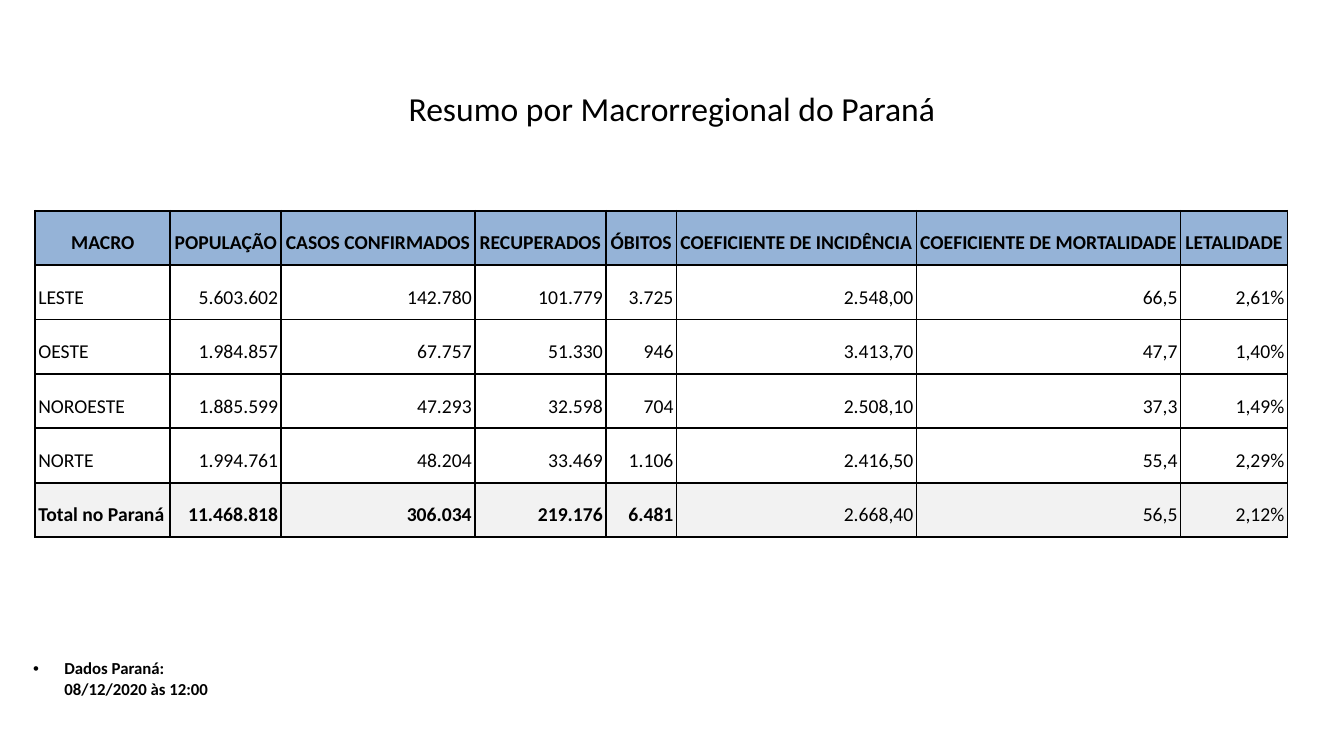
"""Build the slide that sums up cases by macro-region of Paraná."""
import pptx
import pptx.util
import pptx.dml.color
import pptx.enum.text
import pptx.oxml.ns
import lxml.etree

TITLE = "Resumo por Macrorregional do Paraná"
NOTE = "Dados Paraná: 08/12/2020 às 12:00"
HEAD = ["MACRO", "POPULAÇÃO", "CASOS CONFIRMADOS", "RECUPERADOS", "ÓBITOS",
        "COEFICIENTE DE INCIDÊNCIA", "COEFICIENTE DE MORTALIDADE", "LETALIDADE"]
BODY = [
    ["LESTE", "5.603.602", "142.780", "101.779", "3.725", "2.548,00", "66,5", "2,61%"],
    ["OESTE", "1.984.857", "67.757", "51.330", "946", "3.413,70", "47,7", "1,40%"],
    ["NOROESTE", "1.885.599", "47.293", "32.598", "704", "2.508,10", "37,3", "1,49%"],
    ["NORTE", "1.994.761", "48.204", "33.469", "1.106", "2.416,50", "55,4", "2,29%"],
]
TOTAL = ["Total no Paraná", "11.468.818", "306.034", "219.176", "6.481",
         "2.668,40", "56,5", "2,12%"]
COLS = [1.34, 1.1, 1.92, 1.3, 0.7, 2.38, 2.62, 1.06]
ROW = 0.54
BOLD = 5
SIZE = (13.33, 7.5)
INK = {"text": "000000", "head": "95B3D7", "total": "F2F2F2"}

Inch = pptx.util.Inches
Pt = pptx.util.Pt
Align = pptx.enum.text.PP_ALIGN
Anchor = pptx.enum.text.MSO_ANCHOR
qn = pptx.oxml.ns.qn


def rgb(name):
    return pptx.dml.color.RGBColor.from_string(INK[name])


def apply(item, form):
    for key, val in form.items():
        setattr(item, key, val)


def write(para, text, size, bold=False, **form):
    para.text = text
    apply(para, form)
    font = para.runs[0].font
    apply(font, {"name": "Calibri", "size": Pt(size), "bold": bold})
    font.color.rgb = rgb("text")


def add_text(slide, left, top, width, height):
    box = slide.shapes.add_textbox(*map(Inch, (left, top, width, height)))
    box.text_frame.word_wrap = True
    return box.text_frame.paragraphs[0]


def add_dot(para):
    props = para._p.get_or_add_pPr()
    apply_to = {"marL": Inch(0.31), "indent": -Inch(0.31)}
    for key, val in apply_to.items():
        props.set(key, str(int(val)))
    font = lxml.etree.SubElement(props, qn("a:buFont"))
    font.set("typeface", "Arial")
    lxml.etree.SubElement(props, qn("a:buChar")).set("char", "•")


def add_edges(cell):
    props = cell._tc.get_or_add_tcPr()
    for spot, side in enumerate("LRTB"):
        line = lxml.etree.Element(qn("a:ln" + side), w=str(int(Pt(1.5))))
        fill = lxml.etree.SubElement(line, qn("a:solidFill"))
        lxml.etree.SubElement(fill, qn("a:srgbClr")).set("val", INK["text"])
        props.insert(spot, line)


def fill_cell(cell, text, row, col, last):
    apply(cell, {"vertical_anchor": Anchor.BOTTOM,
                 "margin_left": Inch(0.03), "margin_right": Inch(0.03),
                 "margin_top": Inch(0.1), "margin_bottom": Inch(0.1)})
    shade = {0: "head", last: "total"}.get(row)
    if shade:
        cell.fill.solid()
        cell.fill.fore_color.rgb = rgb(shade)
    else:
        cell.fill.background()
    side = Align.CENTER if row == 0 else Align.RIGHT if col else Align.LEFT
    bold = row == 0 or (row == last and col < BOLD)
    write(cell.text_frame.paragraphs[0], text, 14, bold,
          alignment=side, line_spacing=1.15)
    add_edges(cell)


def add_grid(slide, left, top):
    rows = [HEAD, *BODY, TOTAL]
    frame = slide.shapes.add_table(len(rows), len(COLS), Inch(left), Inch(top),
                                   Inch(sum(COLS)), Inch(ROW * len(rows)))
    table = frame.table
    apply(table, {"first_row": False, "horz_banding": False})
    for col, width in zip(table.columns, COLS):
        col.width = Inch(width)
    for r, texts in enumerate(rows):
        table.rows[r].height = Inch(ROW)
        for c, text in enumerate(texts):
            fill_cell(table.cell(r, c), text, r, c, len(rows) - 1)


def main():
    deck = pptx.Presentation()
    apply(deck, {"slide_width": Inch(SIZE[0]), "slide_height": Inch(SIZE[1])})
    slide = deck.slides.add_slide(deck.slide_layouts[6])
    wide = 8.38
    title = add_text(slide, (SIZE[0] - wide) / 2, 0.82, wide, 0.5)
    write(title, TITLE, 24, alignment=Align.CENTER)
    note = add_text(slide, 0.23, 6.48, 2.22, 0.51)
    add_dot(note)
    write(note, NOTE, 12, True)
    add_grid(slide, 0.35, 2.09)
    deck.save("out.pptx")


if __name__ == "__main__":
    main()
